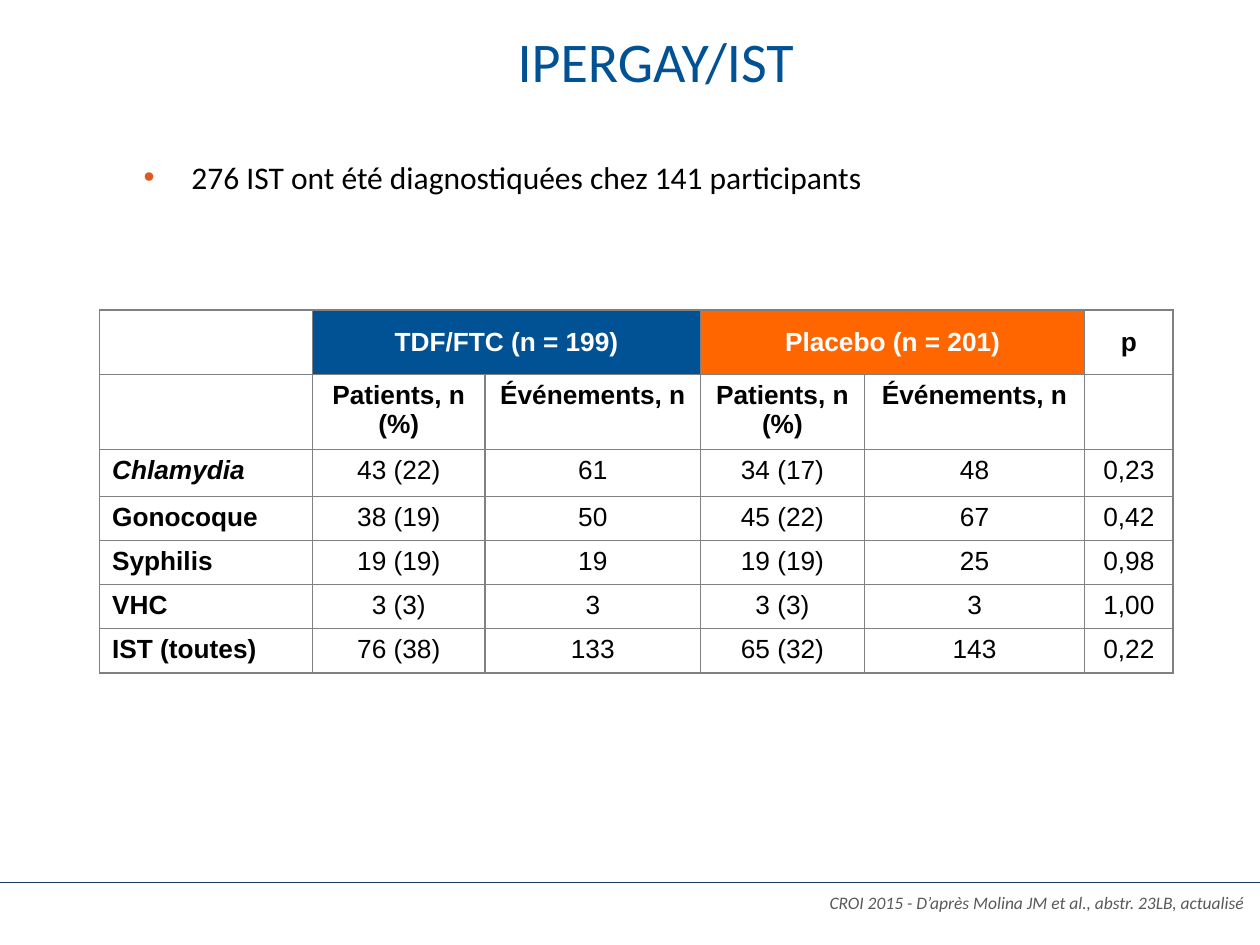
"""Build the IPERGAY/IST slide: a title, one finding, a results table and its citation."""
from dataclasses import dataclass
from typing import Optional

from lxml import etree
from pptx import Presentation
from pptx.dml.color import RGBColor
from pptx.enum.shapes import MSO_CONNECTOR
from pptx.enum.text import MSO_ANCHOR, PP_ALIGN
from pptx.oxml.ns import qn
from pptx.util import Inches, Pt

LEFT, CENTER, RIGHT = PP_ALIGN.LEFT, PP_ALIGN.CENTER, PP_ALIGN.RIGHT
TOP, MIDDLE = MSO_ANCHOR.TOP, MSO_ANCHOR.MIDDLE
STRAIGHT = MSO_CONNECTOR.STRAIGHT

COLORS = {
    "blue": "005294", "orange": "FF6600", "bullet": "DC5A20", "rule": "17375E",
    "border": "808080", "gray": "595959", "black": "000000", "white": "FFFFFF",
}
GRID_COLS, GRID_ROWS = 100, 75
TABLE_LEFT, TABLE_TOP = 7.9, 24.6
COL_WIDTHS = [16.9, 13.7, 17.1, 13, 17.5, 7]
ROW_HEIGHTS = [5.1, 5.4, 3.7] + [3.2] * 4
SUBHEADS = ["Patients, n (%)", "Événements, n"]
RESULTS = [
    ["Chlamydia", "43 (22)", "61", "34 (17)", "48", "0,23"],
    ["Gonocoque", "38 (19)", "50", "45 (22)", "67", "0,42"],
    ["Syphilis", "19 (19)", "19", "19 (19)", "25", "0,98"],
    ["VHC", "3 (3)", "3", "3 (3)", "3", "1,00"],
    ["IST (toutes)", "76 (38)", "133", "65 (32)", "143", "0,22"],
]


@dataclass
class Style:
    size: float
    color: str
    font: str = "Calibri"
    bold: bool = False
    italic: bool = False
    align: PP_ALIGN = LEFT
    anchor: MSO_ANCHOR = TOP


@dataclass
class TextItem:
    text: str
    col: float
    row: float
    cols: float
    rows: float
    style: Style
    inset_top: float = 0
    inset_right: float = 0
    line_spacing: Optional[float] = None
    bullet: bool = False


@dataclass
class Header:
    text: str
    col: int
    span: int
    color: str
    fill: Optional[str] = None


TEXTS = [
    TextItem("276 IST ont été diagnostiquées chez 141 participants",
             11.4, 12.5, 83.6, 50.2, Style(18, "black"), bullet=True),
    TextItem("IPERGAY/IST", 11.6, 2.6, 80.9, 6.6,
             Style(32, "blue", align=CENTER, anchor=MIDDLE), line_spacing=22),
    TextItem("CROI 2015 - D’après Molina JM et al., abstr. 23LB, actualisé",
             35.3, 70, 64.7, 5, Style(10, "gray", italic=True, align=RIGHT),
             inset_top=0.8, inset_right=1.3),
]
HEADERS = [
    Header("TDF/FTC (n = 199)", 1, 2, "white", "blue"),
    Header("Placebo (n = 201)", 3, 2, "white", "orange"),
    Header("p", 5, 1, "black"),
]

prs = Presentation()
prs.slide_width, prs.slide_height = Inches(10), Inches(7.5)


def x(cols: float) -> int:
    return round(prs.slide_width * cols / GRID_COLS)


def y(rows: float) -> int:
    return round(prs.slide_height * rows / GRID_ROWS)


def rgb(name: str) -> RGBColor:
    return RGBColor.from_string(COLORS[name])


def write(tf, text: str, style: Style):
    p = tf.paragraphs[0]
    p.alignment = style.align
    r = p.add_run()
    r.text = text
    r.font.name, r.font.size = style.font, Pt(style.size)
    r.font.bold, r.font.italic = style.bold, style.italic
    r.font.color.rgb = rgb(style.color)
    return p


def add_bullet(p) -> None:
    pPr = p._p.get_or_add_pPr()
    pPr.set("marL", str(x(3.8)))
    pPr.set("indent", str(-x(3.8)))
    clr = etree.SubElement(pPr, qn("a:buClr"))
    etree.SubElement(clr, qn("a:srgbClr"), val=COLORS["bullet"])
    etree.SubElement(pPr, qn("a:buFont"), typeface="Arial")
    etree.SubElement(pPr, qn("a:buChar"), char="•")


def draw_text(s, item: TextItem) -> None:
    sp = s.shapes.add_textbox(x(item.col), y(item.row), x(item.cols), y(item.rows))
    tf = sp.text_frame
    tf.word_wrap = True
    tf.vertical_anchor = item.style.anchor
    tf.margin_left = tf.margin_bottom = 0
    tf.margin_top, tf.margin_right = y(item.inset_top), x(item.inset_right)
    p = write(tf, item.text, item.style)
    if item.line_spacing:
        p.line_spacing = Pt(item.line_spacing)
    if item.bullet:
        add_bullet(p)


def draw_rule(s) -> None:
    sp = s.shapes.add_connector(STRAIGHT, 0, y(70), x(GRID_COLS), y(70))
    sp.line.color.rgb = rgb("rule")
    sp.line.width = Pt(0.25)
    etree.SubElement(sp._element.spPr, qn("a:effectLst"))


def format_cell(cell) -> None:
    tcPr = cell._tc.get_or_add_tcPr()
    for side in ("a:lnL", "a:lnR", "a:lnT", "a:lnB"):
        ln = etree.SubElement(tcPr, qn(side), w=str(Pt(0.75)))
        fill = etree.SubElement(ln, qn("a:solidFill"))
        etree.SubElement(fill, qn("a:srgbClr"), val=COLORS["border"])
    cell.fill.background()


def draw_table(s) -> None:
    table = s.shapes.add_table(
        len(ROW_HEIGHTS), len(COL_WIDTHS), x(TABLE_LEFT), y(TABLE_TOP),
        x(sum(COL_WIDTHS)), y(sum(ROW_HEIGHTS))).table
    table.first_row = table.horz_banding = False
    for column, width in zip(table.columns, COL_WIDTHS):
        column.width = x(width)
    for row, height in zip(table.rows, ROW_HEIGHTS):
        row.height = y(height)
    for cell in table.iter_cells():
        format_cell(cell)
    for h in HEADERS:
        cell = table.cell(0, h.col)
        if h.span > 1:
            cell.merge(table.cell(0, h.col + h.span - 1))
        if h.fill:
            cell.fill.solid()
            cell.fill.fore_color.rgb = rgb(h.fill)
        cell.vertical_anchor = MIDDLE
        write(cell.text_frame, h.text, Style(15, h.color, "Arial", True, align=CENTER))
    for i, text in enumerate(SUBHEADS * 2, 1):
        write(table.cell(1, i).text_frame, text,
              Style(15, "black", "Arial", True, align=CENTER))
    for i, values in enumerate(RESULTS, 2):
        for j, text in enumerate(values):
            style = Style(15, "black", "Arial", j == 0, text == "Chlamydia",
                          CENTER if j else LEFT)
            write(table.cell(i, j).text_frame, text, style)


def main() -> None:
    s = prs.slides.add_slide(prs.slide_layouts[6])
    draw_rule(s)
    for item in TEXTS:
        draw_text(s, item)
    draw_table(s)
    prs.save("out.pptx")


if __name__ == "__main__":
    main()
